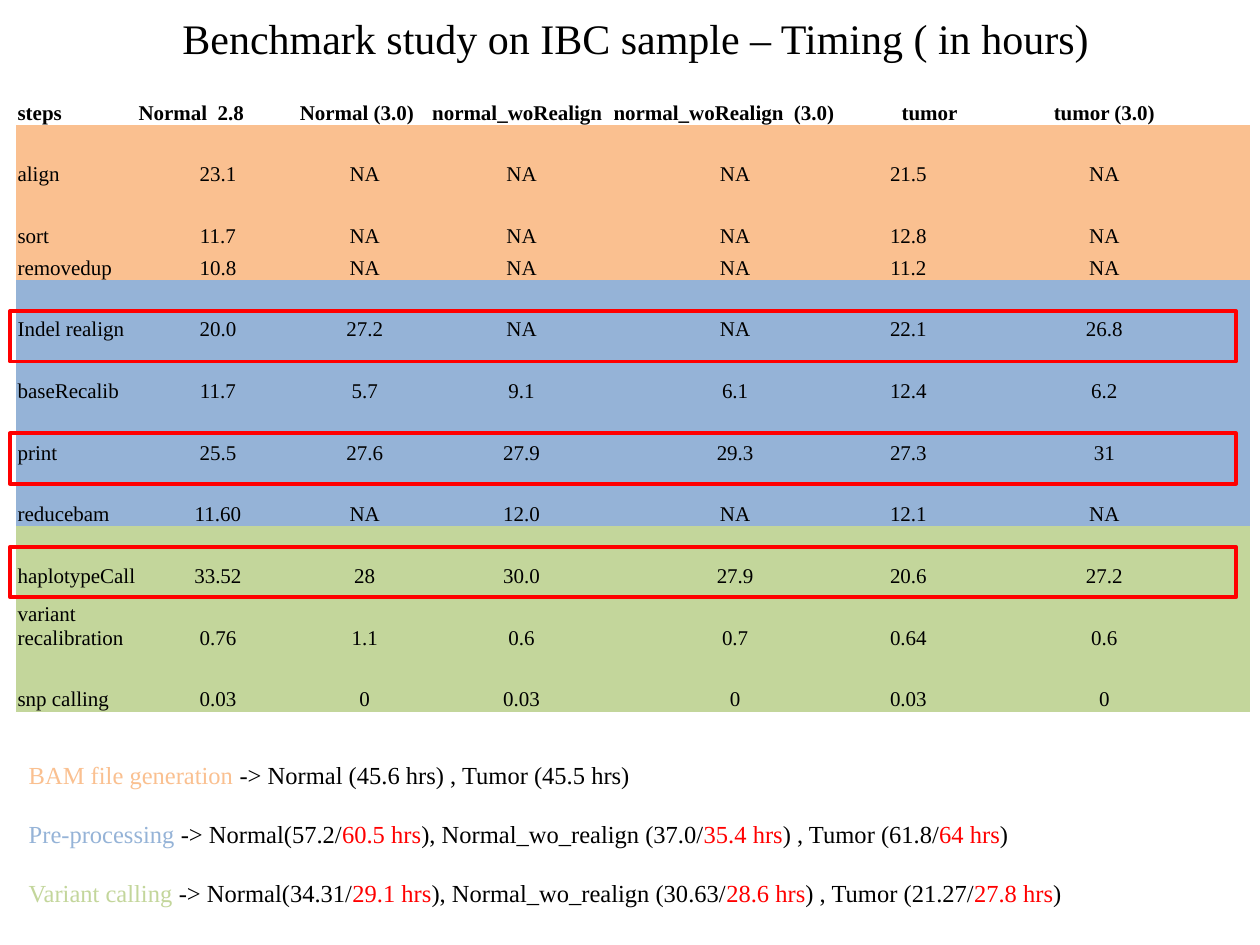
from pptx import Presentation
from pptx.dml.color import RGBColor
from pptx.enum import shapes, text
from pptx.oxml.ns import qn
from pptx.util import Inches, Pt

FONT = "Times New Roman"
BLACK = RGBColor(0x00, 0x00, 0x00)
RED = RGBColor(0xFF, 0x00, 0x00)
ORANGE = RGBColor(0xFA, 0xC0, 0x90)
BLUE = RGBColor(0x95, 0xB3, 0xD7)
GREEN = RGBColor(0xC3, 0xD6, 0x9B)

NO_STYLE = "{2D5ABB26-0587-4C30-8999-92F81FD0307C}"
LEFT, CENTER, RIGHT = text.PP_ALIGN.LEFT, text.PP_ALIGN.CENTER, text.PP_ALIGN.RIGHT

COL_WIDTHS = [0.96, 1.28, 1.05, 1.44, 1.95, 0.8, 2.31]
ROW_HEIGHT, SHORT_ROW_HEIGHT = 0.49, 0.25
HEADER = ["steps", "Normal  2.8", "Normal (3.0)", "normal_woRealign",
          "normal_woRealign  (3.0)", "tumor", "tumor (3.0)"]
HEADER_ALIGN = [LEFT] * 5 + [RIGHT, CENTER]
BODY_ALIGN = [LEFT] + [CENTER] * 6
STAGES = [
    (ORANGE, [
        ["align", "23.1", "NA", "NA", "NA", "21.5", "NA"],
        ["sort", "11.7", "NA", "NA", "NA", "12.8", "NA"],
        ["removedup", "10.8", "NA", "NA", "NA", "11.2", "NA"],
    ]),
    (BLUE, [
        ["Indel realign", "20.0", "27.2", "NA", "NA", "22.1", "26.8"],
        ["baseRecalib", "11.7", "5.7", "9.1", "6.1", "12.4", "6.2"],
        ["print", "25.5", "27.6", "27.9", "29.3", "27.3", "31"],
        ["reducebam", "11.60", "NA", "12.0", "NA", "12.1", "NA"],
    ]),
    (GREEN, [
        ["haplotypeCall", "33.52", "28", "30.0", "27.9", "20.6", "27.2"],
        ["variant recalibration", "0.76", "1.1", "0.6", "0.7", "0.64", "0.6"],
        ["snp calling", "0.03", "0", "0.03", "0", "0.03", "0"],
    ]),
]
HIGHLIGHT_TOPS = [2.47, 3.44, 4.34]

# Each total line: stage name, its colour, then text alternating black and red.
TOTALS = [
    ("BAM file generation ", ORANGE, ["-> Normal (45.6 hrs) , Tumor (45.5 hrs)"]),
    ("Pre-processing ", BLUE,
     ["-> Normal(57.2/", "60.5 hrs", "), Normal_wo_realign (37.0/", "35.4 hrs",
      ") , Tumor (61.8/", "64 hrs", ")"]),
    ("Variant calling ", GREEN,
     ["-> Normal(34.31/", "29.1 hrs", "), Normal_wo_realign (30.63/", "28.6 hrs",
      ") , Tumor (21.27/", "27.8 hrs", ")"]),
]


def set_font(p, size, bold=False):
    p.font.name = FONT
    p.font.size = Pt(size)
    p.font.bold = bold


def add_run(p, words, color):
    r = p.add_run()
    r.text = words
    r.font.color.rgb = color


def add_text_frame(slide, left, top, width, height):
    tf = slide.shapes.add_textbox(
        Inches(left), Inches(top), Inches(width), Inches(height)).text_frame
    tf.word_wrap = True
    return tf


def add_title(slide):
    p = add_text_frame(slide, 0.34, 0.05, 9.41, 0.5).paragraphs[0]
    p.alignment = CENTER
    set_font(p, 24)
    add_run(p, "Benchmark study on IBC sample – Timing ( in hours)", BLACK)


def fill_row(row, values, aligns, color=None):
    """Write one table row; a row without colour is the bold header."""
    for cell, value, align in zip(row.cells, values, aligns):
        cell.margin_left = cell.margin_right = cell.margin_top = Inches(0.01)
        cell.margin_bottom = 0
        cell.vertical_anchor = text.MSO_ANCHOR.BOTTOM
        if color is None:
            cell.fill.background()
        else:
            cell.fill.solid()
            cell.fill.fore_color.rgb = color
        p = cell.text_frame.paragraphs[0]
        p.alignment = align
        set_font(p, 12, bold=color is None)
        add_run(p, value, BLACK)


def add_timing_table(slide):
    rows = [(HEADER, HEADER_ALIGN, None)]
    rows += [(values, BODY_ALIGN, color)
             for color, steps in STAGES for values in steps]
    table = slide.shapes.add_table(
        len(rows), len(COL_WIDTHS), Inches(0.13), Inches(0.5),
        Inches(sum(COL_WIDTHS)), Inches(5.15)).table
    table.first_row = table.horz_banding = False
    table._tbl.tblPr.find(qn("a:tableStyleId")).text = NO_STYLE
    for column, width in zip(table.columns, COL_WIDTHS):
        column.width = Inches(width)
    for row, (values, aligns, color) in zip(table.rows, rows):
        short = values[0] == "removedup"
        row.height = Inches(SHORT_ROW_HEIGHT if short else ROW_HEIGHT)
        fill_row(row, values, aligns, color)


def add_totals(slide):
    tf = add_text_frame(slide, 0.13, 5.98, 9.73, 1.51)
    for i, (stage, color, parts) in enumerate(TOTALS):
        p = tf.add_paragraph() if i else tf.paragraphs[0]
        if i:
            p.space_before = Pt(17)
        set_font(p, 14)
        add_run(p, stage, color)
        for j, part in enumerate(parts):
            add_run(p, part, RED if j % 2 else BLACK)


def add_highlight(slide, top):
    sp = slide.shapes.add_shape(
        shapes.MSO_SHAPE.RECTANGLE, Inches(0.08), Inches(top), Inches(9.73), Inches(0.4))
    sp.shadow.inherit = False
    sp.fill.background()
    sp.line.color.rgb = RED
    sp.line.width = Pt(2.25)


def main():
    prs = Presentation()
    prs.slide_width, prs.slide_height = Inches(10), Inches(7.5)
    slide = prs.slides.add_slide(prs.slide_layouts[6])
    add_timing_table(slide)
    add_totals(slide)
    for top in HIGHLIGHT_TOPS:
        add_highlight(slide, top)
    add_title(slide)
    prs.save("out.pptx")


if __name__ == "__main__":
    main()
